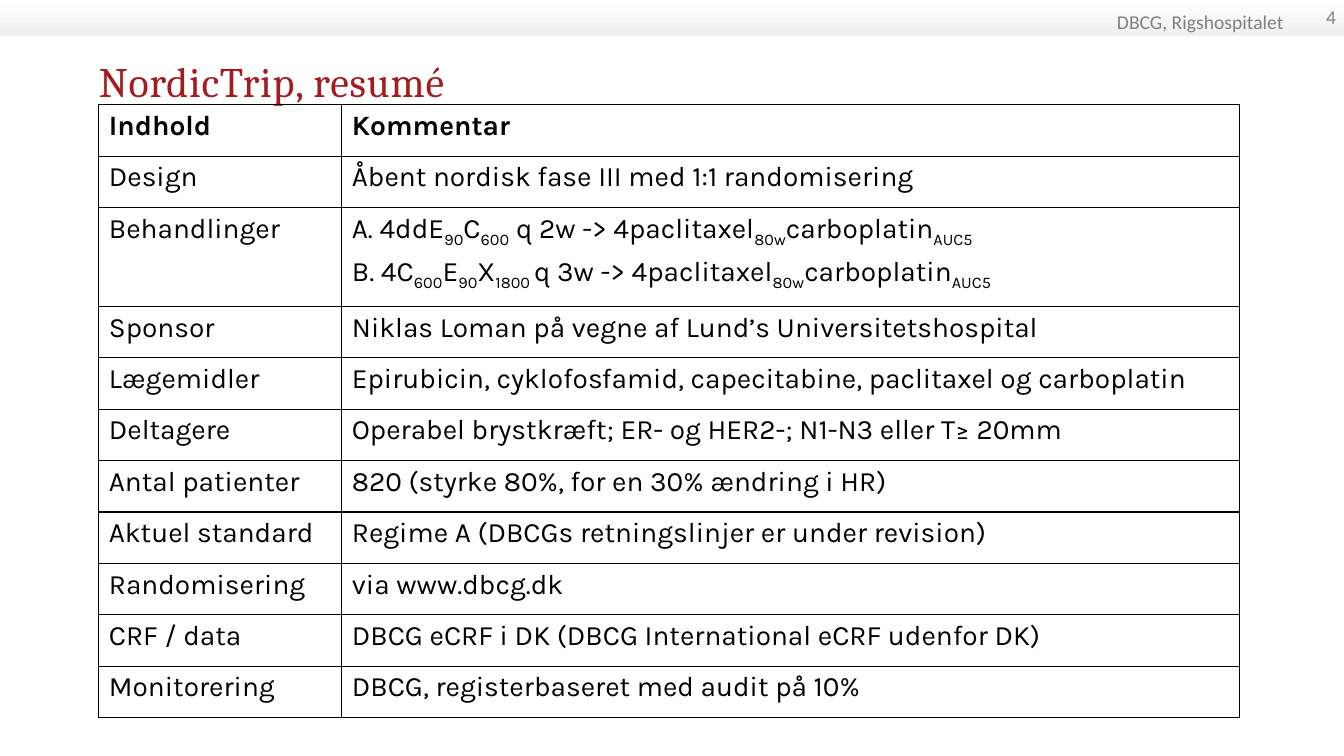
from dataclasses import dataclass

from lxml import etree
from pptx import Presentation, util as u
from pptx.dml.color import RGBColor
from pptx.enum import shapes, text
from pptx.oxml import ns


@dataclass(frozen=True)
class Theme:
    black: str = "000000"
    red: str = "A31D20"
    grey: str = "808080"
    band_top: str = "FFFFFF"
    band_bottom: str = "EFF0EF"
    title_size: float = 30
    table_size: float = 20
    note_size: float = 14
    border: float = 1


THEME = Theme()
TITLE = dict(name="Cambria", size=u.Pt(THEME.title_size), bold=False)
BODY = dict(name="Karla", size=u.Pt(THEME.table_size))
NOTE = dict(name="Calibri", size=u.Pt(THEME.note_size))

ROWS = [
    ("Indhold", "Kommentar"),
    ("Design", "Åbent nordisk fase III med 1:1 randomisering"),
    ("Behandlinger",
     "A. 4ddE{90}C{600} q 2w -> 4paclitaxel{80w}carboplatin{AUC5}\n"
     "B. 4C{600}E{90}X{1800 }q 3w -> 4paclitaxel{80w}carboplatin{AUC5}"),
    ("Sponsor", "Niklas Loman på vegne af Lund’s Universitetshospital"),
    ("Lægemidler", "Epirubicin, cyklofosfamid, capecitabine, paclitaxel og carboplatin"),
    ("Deltagere", "Operabel brystkræft; ER- og HER2-; N1-N3 eller T≥ 20mm"),
    ("Antal patienter", "820 (styrke 80%, for en 30% ændring i HR)"),
    ("Aktuel standard", "Regime A (DBCGs retningslinjer er under revision)"),
    ("Randomisering", "via www.dbcg.dk"),
    ("CRF / data", "DBCG eCRF i DK (DBCG International eCRF udenfor DK)"),
    ("Monitorering", "DBCG, registerbaseret med audit på 10%"),
]


def apply(target, values):
    for name, value in values.items():
        setattr(target, name, value)


def place(left, top, width, height):
    return dict(left=u.Inches(left), top=u.Inches(top),
                width=u.Inches(width), height=u.Inches(height))


def margins(size):
    return {f"margin_{side}": u.Inches(size)
            for side in ("left", "top", "right", "bottom")}


def add_span(para, words, style, color):
    span = para.add_run()
    span.text = words
    apply(span.font, style)
    span.font.color.rgb = RGBColor.from_string(color)
    return span


def add_band(page):
    band = page.shapes.add_shape(shapes.MSO_SHAPE.RECTANGLE,
                                 **place(0, 0, 13.33, 0.36))
    band.shadow.inherit = False
    band.line.fill.background()
    band.fill.gradient()
    band.fill.gradient_angle = 270
    for stop, color in zip(band.fill.gradient_stops,
                           (THEME.band_top, THEME.band_bottom)):
        stop.color.rgb = RGBColor.from_string(color)


def add_note(page, words, spot, frame, align):
    box = page.shapes.add_textbox(**spot)
    apply(box.text_frame, frame)
    para = box.text_frame.paragraphs[0]
    para.alignment = align
    add_span(para, words, NOTE, THEME.grey)


def set_title(page, words):
    title = page.shapes.title
    apply(title, place(0.98, 0.55, 11.71, 0.95))
    apply(title.text_frame, dict(
        margins(0), word_wrap=True, auto_size=text.MSO_AUTO_SIZE.NONE,
        vertical_anchor=text.MSO_ANCHOR.TOP))
    para = title.text_frame.paragraphs[0]
    para.alignment = text.PP_ALIGN.LEFT
    span = add_span(para, words, TITLE, THEME.red)
    span._r.get_or_add_rPr().set("spc", "60")


def draw_borders(cell):
    properties = cell._tc.get_or_add_tcPr()
    for side in ("a:lnL", "a:lnR", "a:lnT", "a:lnB"):
        line = etree.SubElement(properties, ns.qn(side),
                                w=str(u.Pt(THEME.border)))
        fill = etree.SubElement(line, ns.qn("a:solidFill"))
        etree.SubElement(fill, ns.qn("a:srgbClr"), val=THEME.black)


def fill_cell(cell, words, bold):
    draw_borders(cell)
    cell.fill.background()
    frame = cell.text_frame
    for number, line in enumerate(words.split("\n")):
        para = frame.add_paragraph() if number else frame.paragraphs[0]
        if number:
            para.space_before = u.Pt(4.5)
        for index, part in enumerate(line.replace("}", "{").split("{")):
            if part:
                span = add_span(para, part, dict(BODY, bold=bold), THEME.black)
                if index % 2:
                    span._r.get_or_add_rPr().set("baseline", "-25000")


def add_summary(page):
    table = page.shapes.add_table(len(ROWS), 2,
                                  **place(0.98, 1.04, 11.3, 6.05)).table
    apply(table, dict(first_row=False, horz_banding=False))
    for column, width in zip(table.columns, (2.41, 8.9)):
        column.width = u.Inches(width)
    for number, (row, entries) in enumerate(zip(table.rows, ROWS)):
        row.height = u.Inches(0.98 if "\n" in entries[1] else 0.51)
        for cell, words in zip(row.cells, entries):
            fill_cell(cell, words, number == 0)


def main():
    deck = Presentation()
    apply(deck, dict(slide_width=u.Inches(13.33), slide_height=u.Inches(7.5)))
    page = deck.slides.add_slide(deck.slide_layouts[5])
    add_band(page)
    add_note(page, "DBCG, Rigshospitalet", place(10.98, 0.05, 2.03, 0.34),
             dict(word_wrap=False), text.PP_ALIGN.LEFT)
    set_title(page, "NordicTrip, resumé")
    add_note(page, "4", place(12.83, 0.09, 0.42, 0.19),
             dict(margins(0), word_wrap=True,
                  vertical_anchor=text.MSO_ANCHOR.BOTTOM), text.PP_ALIGN.RIGHT)
    add_summary(page)
    deck.save("out.pptx")


if __name__ == "__main__":
    main()
